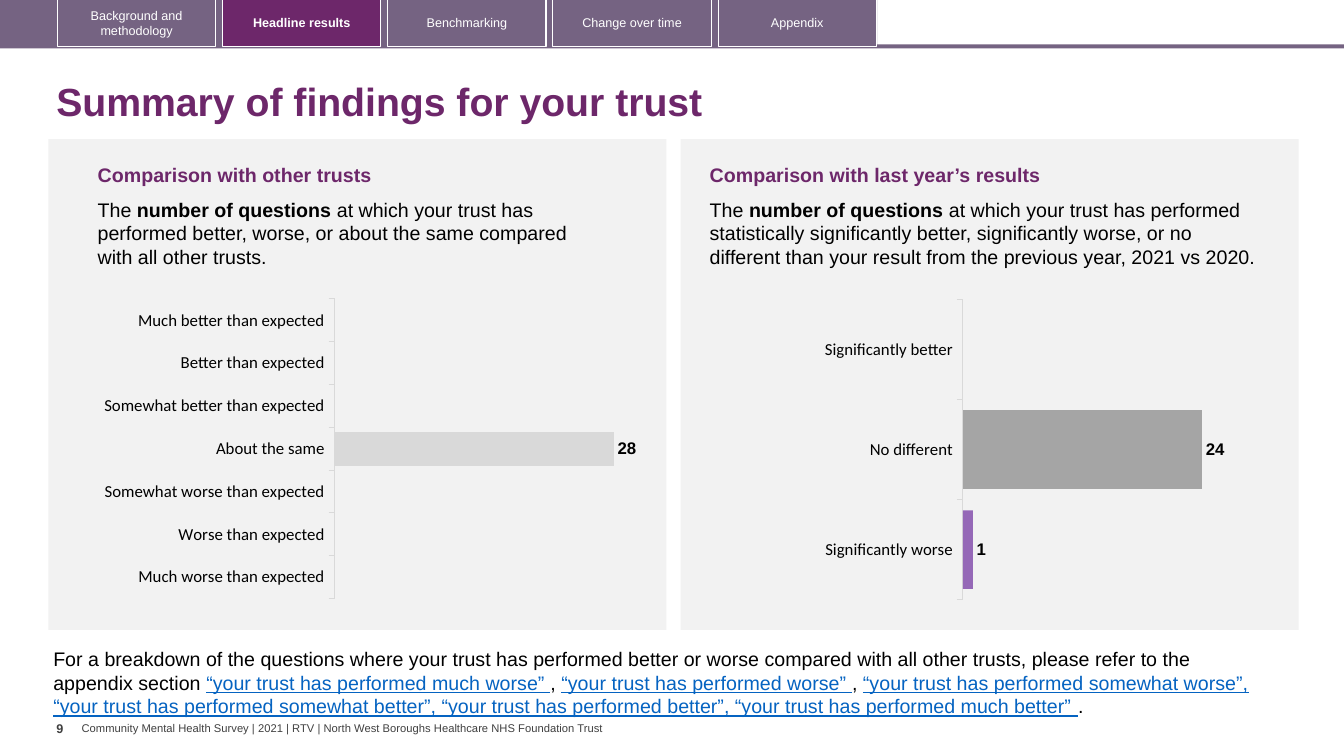
"""Build the trust survey summary slide with its two bar charts."""
from dataclasses import dataclass

from lxml import etree
from pptx import Presentation
from pptx.chart.data import CategoryChartData
from pptx.dml.color import RGBColor
from pptx.enum.chart import XL_CHART_TYPE as CT, XL_LABEL_POSITION as LP, XL_TICK_LABEL_POSITION as TLP
from pptx.enum.chart import XL_TICK_MARK as TM
from pptx.enum.shapes import MSO_SHAPE
from pptx.enum.text import MSO_ANCHOR as MA, PP_ALIGN as PA
from pptx.oxml import parse_xml
from pptx.oxml.ns import nsdecls, qn
from pptx.util import Inches, Pt


@dataclass(frozen=True)
class Theme:
    font: str = "Arial"
    chart_font: str = "Calibri"
    plum: str = "6D276A"
    header: str = "756382"
    panel: str = "F2F2F2"
    link: str = "0563C1"
    black: str = "000000"
    white: str = "FFFFFF"
    muted: str = "404040"
    axis: str = "D9D9D9"
    series: str = "4472C4"
    title: int = 28
    body: int = 14
    chart: int = 12
    small: int = 9
    footer: int = 8


T = Theme()


def rgb(color):
    return RGBColor.from_string(color)


def style(font, size, color, bold=False, name=T.font):
    font.name, font.size, font.bold = name, Pt(size), bold
    font.color.rgb = rgb(color)


def add_rect(slide, x, y, w, h, fill=None, line=None):
    sp = slide.shapes.add_shape(MSO_SHAPE.RECTANGLE, Inches(x), Inches(y), Inches(w), Inches(h))
    sp.shadow.inherit = False
    if fill:
        sp.fill.solid()
        sp.fill.fore_color.rgb = rgb(fill)
    else:
        sp.fill.background()
    if line:
        sp.line.color.rgb = rgb(line)
        sp.line.width = Pt(0.75)
    else:
        sp.line.fill.background()
    return sp


def add_tab(slide, x, label, active):
    sp = add_rect(slide, x, -0.01, 1.57, 0.47, T.plum if active else None, T.white)
    tf = sp.text_frame
    tf.word_wrap, tf.vertical_anchor = True, MA.MIDDLE
    p = tf.paragraphs[0]
    p.text, p.alignment = label, PA.CENTER
    style(p.runs[0].font, T.small, T.white, active)


def add_text(slide, x, y, w, h, runs, size=T.body, color=T.black, anchor=MA.TOP, inset=0.1):
    """Add a text box; each run is (text, kind), kind being "", "bold" or "link"."""
    tf = slide.shapes.add_textbox(Inches(x), Inches(y), Inches(w), Inches(h)).text_frame
    tf.word_wrap, tf.vertical_anchor = True, anchor
    tf.margin_left = tf.margin_right = Inches(inset)
    tf.margin_top = tf.margin_bottom = Inches(inset / 2)
    p = tf.paragraphs[0]
    for text, kind in runs:
        r = p.add_run()
        r.text = text
        style(r.font, size, T.link if kind == "link" else color, kind == "bold")
        r.font.underline = kind == "link"
    return p


def set_plot_layout(chart, x, y, w, h):
    plot_area = chart.plots[0]._element.getparent()
    for old in plot_area.findall(qn("c:layout")):
        plot_area.remove(old)
    sizes = "".join(f'<c:{tag} val="{val}"/>' for tag, val in zip("xywh", (x, y, w, h)))
    plot_area.insert(0, parse_xml(
        f'<c:layout {nsdecls("c")}><c:manualLayout><c:layoutTarget val="inner"/>'
        f'<c:xMode val="edge"/><c:yMode val="edge"/>{sizes}</c:manualLayout></c:layout>'))


def set_opacity(fill_format, percent):
    color = fill_format._xPr.find(qn("a:solidFill"))[0]
    etree.SubElement(color, qn("a:alpha")).set("val", str(percent * 1000))


def add_bars(slide, x, y, rows):
    """Add a bar chart; each row is (category, value, colour, opacity)."""
    data = CategoryChartData(number_format="0")
    data.categories = [row[0] for row in rows]
    data.add_series("Series 1", [row[1] for row in rows])
    chart = slide.shapes.add_chart(
        CT.BAR_CLUSTERED, Inches(x), Inches(y), Inches(6.23), Inches(3.41), data).chart
    chart.has_legend = chart.has_title = False
    style(chart.font, T.chart, T.black, name=T.chart_font)
    set_plot_layout(chart, 0.467, 0.072, 0.476, 0.872)

    cat, val = chart.category_axis, chart.value_axis
    cat.reverse_order = True
    cat.major_tick_mark, cat.minor_tick_mark = TM.OUTSIDE, TM.NONE
    cat.tick_label_position = TLP.LOW
    cat.format.line.color.rgb = rgb(T.axis)
    cat.format.line.width = Pt(0.75)
    style(cat.tick_labels.font, T.chart, T.black, name=T.chart_font)
    val.visible = val.has_major_gridlines = False
    val.minimum_scale, val.maximum_scale = 0, 30

    plot = chart.plots[0]
    plot.gap_width, plot.vary_by_categories = 27, False
    series = plot.series[0]
    series.format.fill.solid()
    series.format.fill.fore_color.rgb = rgb(T.series)
    for i, (_, _, color, opacity) in enumerate(rows):
        fill = series.points[i].format.fill
        fill.solid()
        fill.fore_color.rgb = rgb(color)
        if opacity < 100:
            set_opacity(fill, opacity)
    labels = series.data_labels
    labels.show_value, labels.position = True, LP.OUTSIDE_END
    labels.number_format, labels.number_format_is_linked = "0", False
    style(labels.font, T.chart, T.black, True)


def add_panel(slide, x, text_x, text_w, heading, rest, chart_at, rows):
    add_rect(slide, x, 1.38, 6.13, 4.87, T.panel)
    add_text(slide, text_x, 1.57, 5.52, 0.34, [(heading, "bold")], color=T.plum)
    add_text(slide, text_x, 1.91, text_w, 0.81,
             [("The ", ""), ("number of questions ", "bold"), (rest, "")])
    add_bars(slide, *chart_at, rows)


def add_header(slide):
    add_rect(slide, -0.03, 0.44, 13.36, 0.04, T.header)
    add_rect(slide, -0.03, 0, 8.73, 0.47, T.header)
    tabs = ["Background and methodology", "Headline results", "Benchmarking",
            "Change over time", "Appendix"]
    for i, label in enumerate(tabs):
        add_tab(slide, 0.57 + 1.638 * i, label, label == "Headline results")


def main():
    prs = Presentation()
    prs.slide_width, prs.slide_height = Inches(13.33), Inches(7.5)
    slide = prs.slides.add_slide(prs.slide_layouts[6])

    add_header(slide)
    title = add_text(slide, 0.46, 0.67, 12.49, 0.72, [("Summary of findings for your trust", "bold")],
                     T.title, T.plum, MA.MIDDLE)
    title.line_spacing = 0.9

    add_panel(slide, 0.48, 0.87, 5, "Comparison with other trusts",
              "at which your trust has performed better, worse, or about the same "
              "compared with all other trusts.", (0.41, 2.72), [
                  ("Much better than expected", None, "419999", 100),
                  ("Better than expected", None, "5FBD83", 100),
                  ("Somewhat better than expected", None, "A9D18E", 100),
                  ("About the same", 28, "D9D9D9", 100),
                  ("Somewhat worse than expected", None, "FFD966", 100),
                  ("Worse than expected", None, "F1BE48", 100),
                  ("Much worse than expected", None, "E87722", 100)])
    add_panel(slide, 6.75, 6.94, 5.65, "Comparison with last year’s results",
              "at which your trust has performed statistically significantly better, significantly "
              "worse, or no different than your result from the previous year, 2021 vs 2020.",
              (6.64, 2.73), [
                  ("Significantly better", None, "9DC3E6", 100),
                  ("No different", 24, "A5A5A5", 100),
                  ("Significantly worse", 1, "7030A0", 71)])

    add_text(slide, 0.43, 6.37, 12.21, 0.81, [
        ("For a breakdown of the questions where your trust has performed better or worse compared "
         "with all other trusts, please refer to the appendix section ", ""),
        ("“your trust has performed much worse” ", "link"), (", ", ""),
        ("“your trust has performed worse” ", "link"), (", ", ""),
        ("“your trust has performed somewhat worse”, “your trust has performed somewhat better”, "
         "“your trust has performed better”, “your trust has performed much better” ", "link"),
        (".", "")])
    add_text(slide, 0.56, 7.15, 0.25, 0.15, [("9", "bold")], T.small, T.muted, inset=0)
    add_text(slide, 0.81, 7.16, 5.24, 0.13, [
        ("Community Mental Health Survey | 2021 | RTV | "
         "North West Boroughs Healthcare NHS Foundation Trust", "")],
        T.footer, T.muted, MA.MIDDLE, 0)
    prs.save("out.pptx")


if __name__ == "__main__":
    main()
